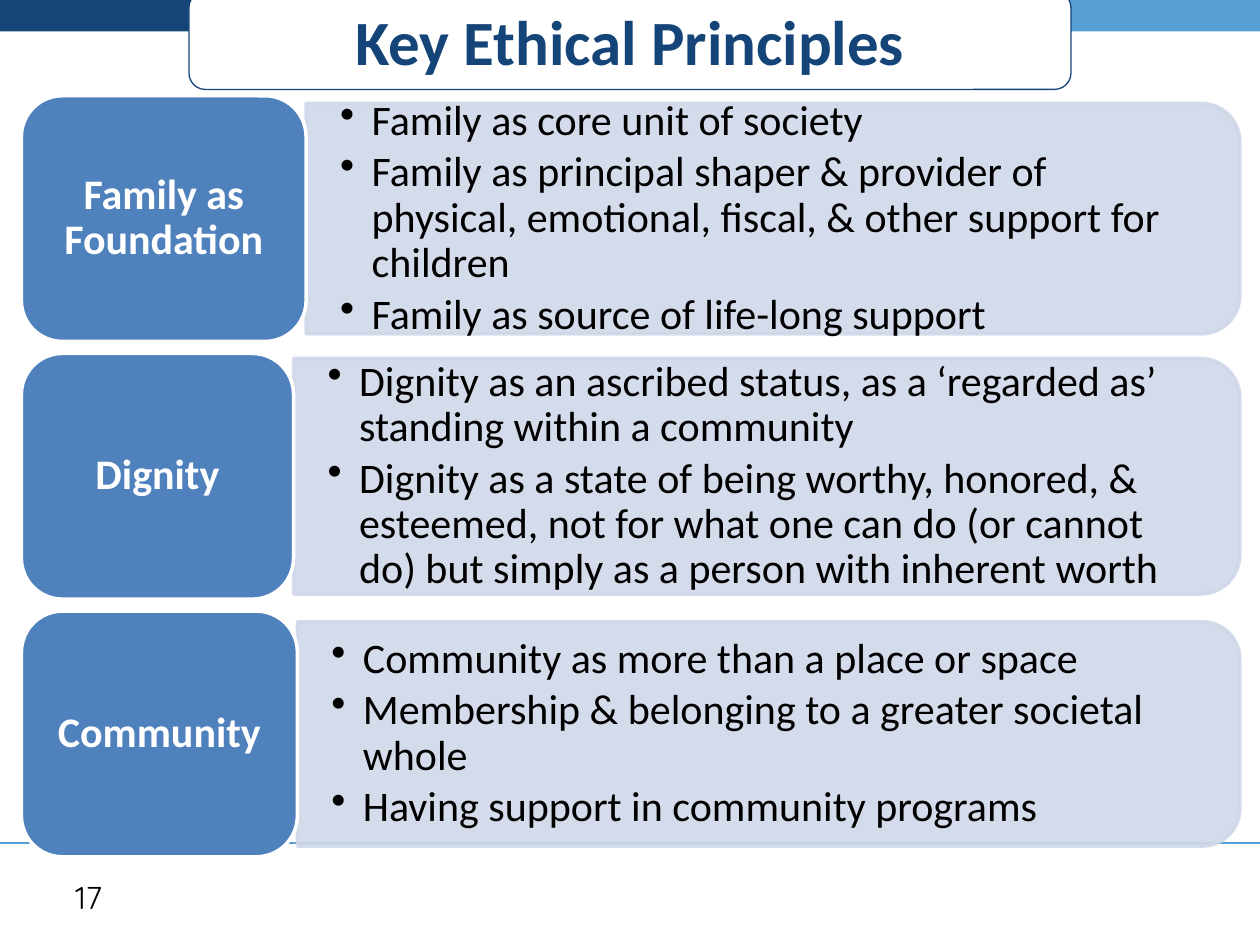
from lxml import etree
from pptx import Presentation
from pptx.dml.color import RGBColor
from pptx.enum.shapes import MSO_CONNECTOR, MSO_SHAPE
from pptx.enum.text import MSO_ANCHOR, PP_ALIGN
from pptx.oxml.ns import qn
from pptx.util import Inches, Pt

NAVY = RGBColor(0x15, 0x45, 0x78)
SKY = RGBColor(0x56, 0xA0, 0xD3)
BLUE = RGBColor(0x4F, 0x81, 0xBD)
PALE = RGBColor(0xD0, 0xD8, 0xE8)
WHITE = RGBColor(0xFF, 0xFF, 0xFF)
BLACK = RGBColor(0, 0, 0)
RECT = MSO_SHAPE.RECTANGLE
ROUND = MSO_SHAPE.ROUNDED_RECTANGLE
TAB = MSO_SHAPE.ROUND_2_SAME_RECTANGLE
MIDDLE = MSO_ANCHOR.MIDDLE
CENTER = PP_ALIGN.CENTER

prs = Presentation()
prs.slide_width, prs.slide_height = Inches(10), Inches(7.5)
slide = prs.slides.add_slide(prs.slide_layouts[6])
shapes = slide.shapes


def add_box(kind, x, y, w, h, fill, line=None, width=0):
    box = shapes.add_shape(kind, Inches(x), Inches(y), Inches(w), Inches(h))
    box.shadow.inherit = False
    box.fill.solid()
    box.fill.fore_color.rgb = fill
    if line is None:
        box.line.fill.background()
    else:
        box.line.color.rgb = line
        box.line.width = Pt(width)
    return box


def add_text(frame, lines, size, color, bold=False, face="Calibri"):
    frame.word_wrap = True
    frame.vertical_anchor = MIDDLE
    for i, line in enumerate(lines):
        para = frame.add_paragraph() if i else frame.paragraphs[0]
        para.text = line
        font = para.font
        font.name, font.size, font.bold = face, Pt(size), bold
        font.color.rgb = color
    return frame.paragraphs


# Footer rule and header bands
rule = shapes.add_connector(MSO_CONNECTOR.STRAIGHT, 0, Inches(6.69), Inches(10), Inches(6.69))
rule.line.color.rgb = SKY
rule.line.width = Pt(1.5)
etree.SubElement(rule._element.spPr, qn("a:effectLst"))
add_box(RECT, 0, -1.25, 5, 1.5, NAVY)
add_box(RECT, 3.5, -1.25, 6.5, 1.5, SKY)

# Slide number
number = shapes.add_textbox(Inches(0.5), Inches(6.92), Inches(2.33), Inches(0.4))
add_text(number.text_frame, ["17"], 18, BLACK, face="Quicksand")

# Title
title = add_box(ROUND, 1.5, -0.07, 7, 0.78, WHITE, NAVY, 0.75)
add_text(title.text_frame, ["Key Ethical Principles"], 36, NAVY, True)[0].alignment = CENTER

# Principles: name, tile width, panel height, points
ROWS = [
    ("Family as Foundation", 2.26, 1.83, [
        "Family as core unit of society",
        "Family as principal shaper & provider of physical, emotional, fiscal, "
        "& other support for children",
        "Family as source of life-long support"]),
    ("Dignity", 2.16, 1.87, [
        "Dignity as an ascribed status, as a ‘regarded as’ standing within a community",
        "Dignity as a state of being worthy, honored, & esteemed, not for what one can do "
        "(or cannot do) but simply as a person with inherent worth"]),
    ("Community", 2.19, 1.78, [
        "Community as more than a place or space",
        "Membership & belonging to a greater societal whole",
        "Having support in community programs"]),
]
LEFT, RIGHT, TOP, STEP, TALL, EDGE = 0.17, 9.84, 0.76, 2.045, 1.95, 0.09

for i, (name, wide, high, points) in enumerate(ROWS):
    top = TOP + i * STEP
    mid = top + TALL / 2
    start = LEFT + wide
    span = RIGHT - start

    # Panel, a tab turned on its side
    panel = add_box(TAB, (start + RIGHT - high) / 2, mid - span / 2, high, span, PALE, PALE, 2)
    panel.rotation = 90
    for color in panel._element.spPr.iter(qn("a:srgbClr")):
        etree.SubElement(color, qn("a:alpha"), val="90000")

    # Bulleted points
    body = shapes.add_textbox(Inches(start), Inches(mid - high / 2 + EDGE),
                              Inches(span - EDGE), Inches(high - 2 * EDGE))
    frame = body.text_frame
    frame.margin_left = frame.margin_right = Inches(0.27)
    frame.margin_top = frame.margin_bottom = Inches(0.14)
    for para in add_text(frame, points, 24, BLACK):
        para.level = 1
        para.line_spacing = 0.9
        para.space_after = Pt(3.6)
        props = para._p.get_or_add_pPr()
        props.set("marL", str(Inches(0.25)))
        props.set("indent", str(Inches(-0.25)))
        mark = etree.Element(qn("a:buChar"), char="•")
        props.insert_element_before(mark, "a:tabLst", "a:defRPr", "a:extLst")

    # Tile and its label
    add_box(ROUND, LEFT, top, wide, TALL, BLUE, WHITE, 2)
    label = shapes.add_textbox(Inches(LEFT + EDGE), Inches(top + EDGE),
                               Inches(wide - 2 * EDGE), Inches(TALL - 2 * EDGE))
    para = add_text(label.text_frame, [name], 24, WHITE, True)[0]
    para.alignment = CENTER
    para.line_spacing = 0.9

prs.save("out.pptx")
